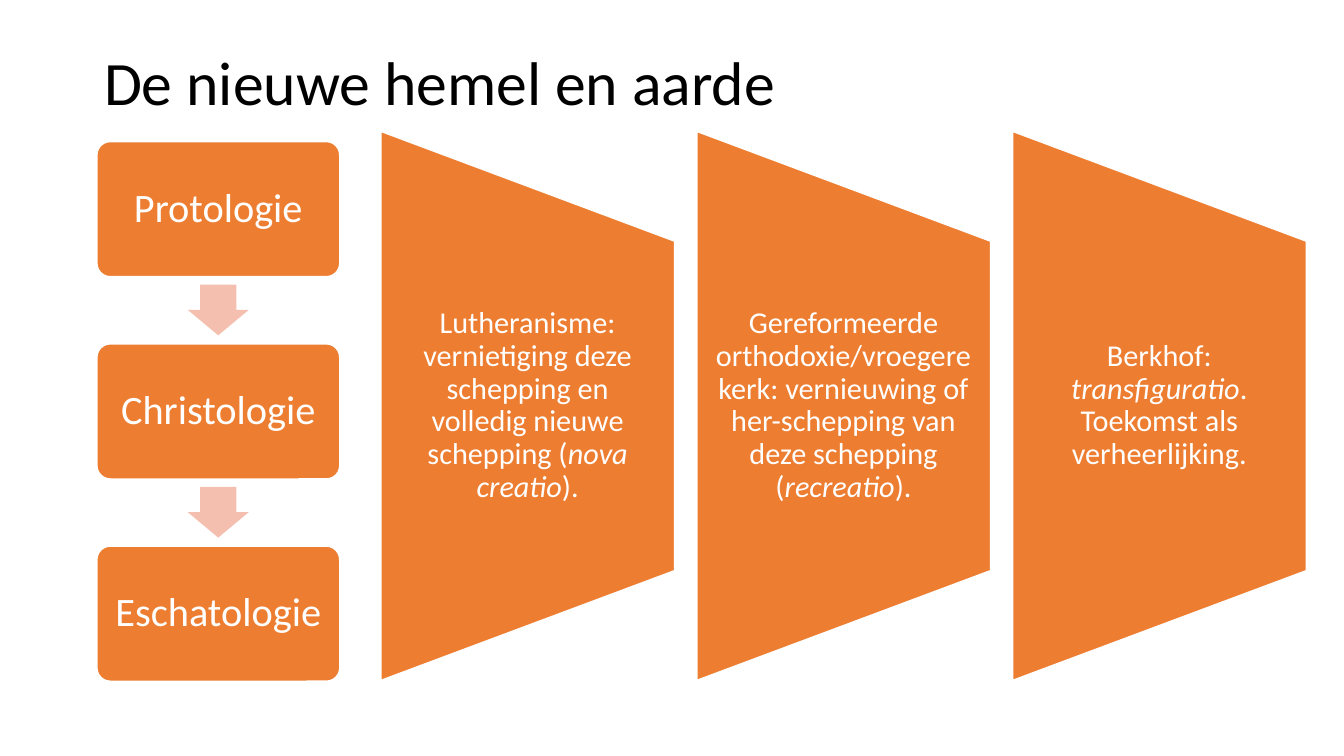
from pptx import Presentation
from pptx.dml.color import RGBColor as Rgb
from pptx.enum.shapes import MSO_SHAPE as Kind
from pptx.enum.text import MSO_ANCHOR as Anchor, MSO_AUTO_SIZE as Fit, PP_ALIGN as Align
from pptx.util import Pt

HUES = {"ink": "000000", "paper": "FFFFFF", "main": "ED7D31", "soft": "F4BFAE"}
STEPS = ["Protologie", "Christologie", "Eschatologie"]
VIEWS = [
    "Lutheranisme: vernietiging deze schepping en volledig nieuwe schepping (*nova creatio*).",
    "Gereformeerde orthodoxie/vroegere kerk: vernieuwing of her-schepping van deze schepping (*recreatio*).",
    "Berkhof: *transfiguratio*. Toekomst als verheerlijking.",
]


def write(frame, text, size, hue="paper", align=Align.CENTER, pads=(7.2, 7.2, 7.2, 7.2)):
    """Fill a text frame; words between asterisks become italic."""
    frame.word_wrap = True
    frame.auto_size = Fit.NONE
    frame.vertical_anchor = Anchor.MIDDLE
    frame.margin_left, frame.margin_top, frame.margin_right, frame.margin_bottom = map(Pt, pads)
    para = frame.paragraphs[0]
    para.alignment = align
    para.line_spacing = 0.9
    for i, part in enumerate(text.split("*")):
        run = para.add_run()
        run.text = part
        font = run.font
        font.name, font.size, font.italic = "Calibri", Pt(size), i % 2 == 1
        font.color.rgb = Rgb.from_string(HUES[hue])


class Deck:
    """Holds the style and the current slide."""

    def __init__(self, wide, high):
        self.file = Presentation()
        self.file.slide_width, self.file.slide_height = Pt(wide), Pt(high)
        self.slide = self.file.slides.add_slide(self.file.slide_layouts[5])

    def title(self, text, box):
        """Place and fill the title."""
        item = self.slide.shapes.title
        item.left, item.top, item.width, item.height = map(Pt, box)
        write(item.text_frame, text, 36.7, "ink", Align.LEFT, (7.2, 3.6, 7.2, 3.6))

    def shape(self, kind, box, hue="main", turn=0, edge=True, tweaks=()):
        """Add a filled preset shape."""
        item = self.slide.shapes.add_shape(kind, *map(Pt, box))
        item.shadow.inherit = False
        item.rotation = turn
        item.fill.solid()
        item.fill.fore_color.rgb = Rgb.from_string(HUES[hue])
        if edge:
            item.line.color.rgb = Rgb.from_string(HUES["paper"])
            item.line.width = Pt(1)
        else:
            item.line.fill.background()
        for i, value in enumerate(tweaks):
            item.adjustments[i] = value
        return item

    def panel(self, text, mid, high):
        """Add a turned trapezoid with upright text."""
        long, deep, tall = 327, 175, 196.6
        self.shape(Kind.FLOWCHART_MANUAL_OPERATION,
                   (mid - long / 2, high - deep / 2, long, deep), turn=270)
        label = self.slide.shapes.add_textbox(
            *map(Pt, (mid - deep / 2, high - tall / 2, deep, tall)))
        write(label.text_frame, text, 18, pads=(8.9, 0, 9.1, 0))

    def step(self, text, top):
        """Add a rounded step box."""
        item = self.shape(Kind.ROUNDED_RECTANGLE, (57.6, top, 144.7, 80.6), tweaks=[0.1])
        write(item.text_frame, text, 24)

    def arrow(self, top):
        """Add a block arrow that points down."""
        self.shape(Kind.RIGHT_ARROW, (114.8, top, 30.2, 36.2), "soft", 90, False, (0.6, 0.5))


def main():
    """Build the slide and save it."""
    deck = Deck(800, 450)
    deck.title("De nieuwe hemel en aarde", (54.7, 24, 690, 54))
    for i, text in enumerate(VIEWS):
        deck.panel(text, 314.2 + 188 * i, 241.6)
    for i, text in enumerate(STEPS):
        top = 84.2 + 120.4 * i
        if i:
            deck.arrow(top - 38.2)
        deck.step(text, top)
    deck.file.save("out.pptx")


if __name__ == "__main__":
    main()
